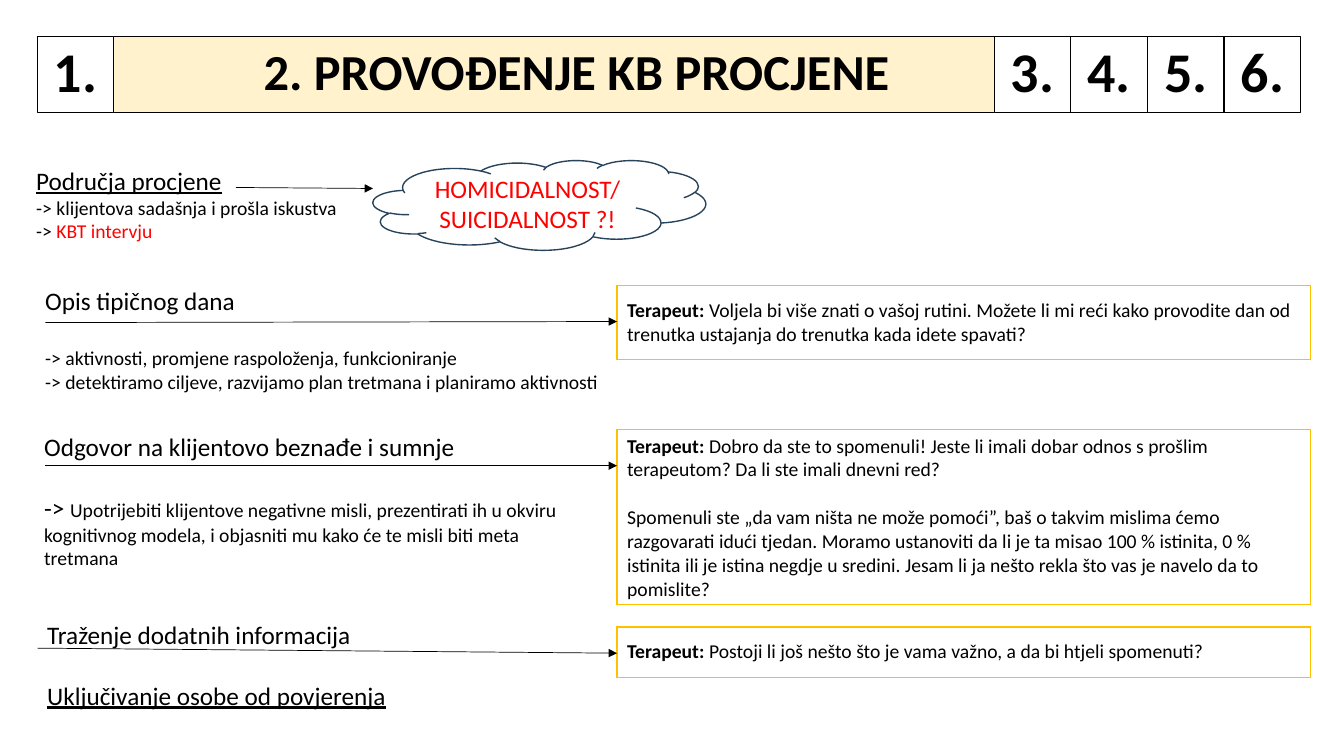
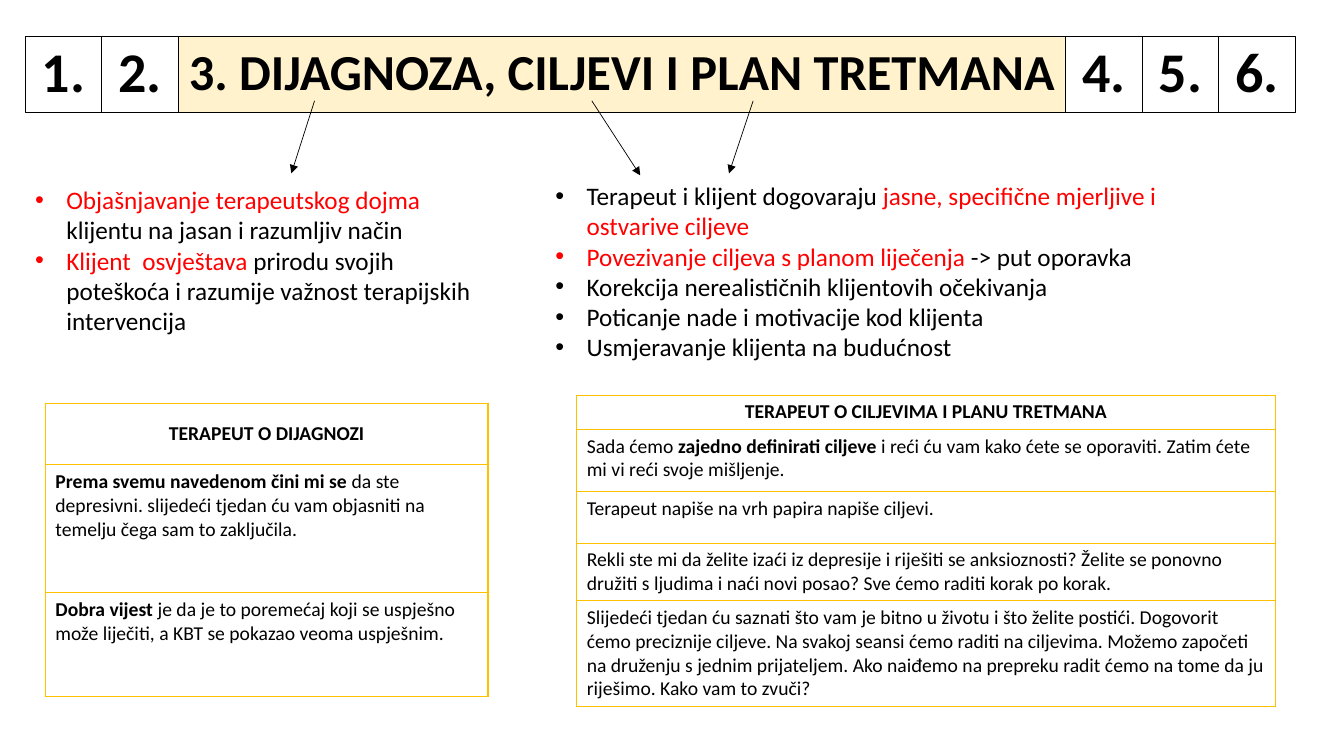
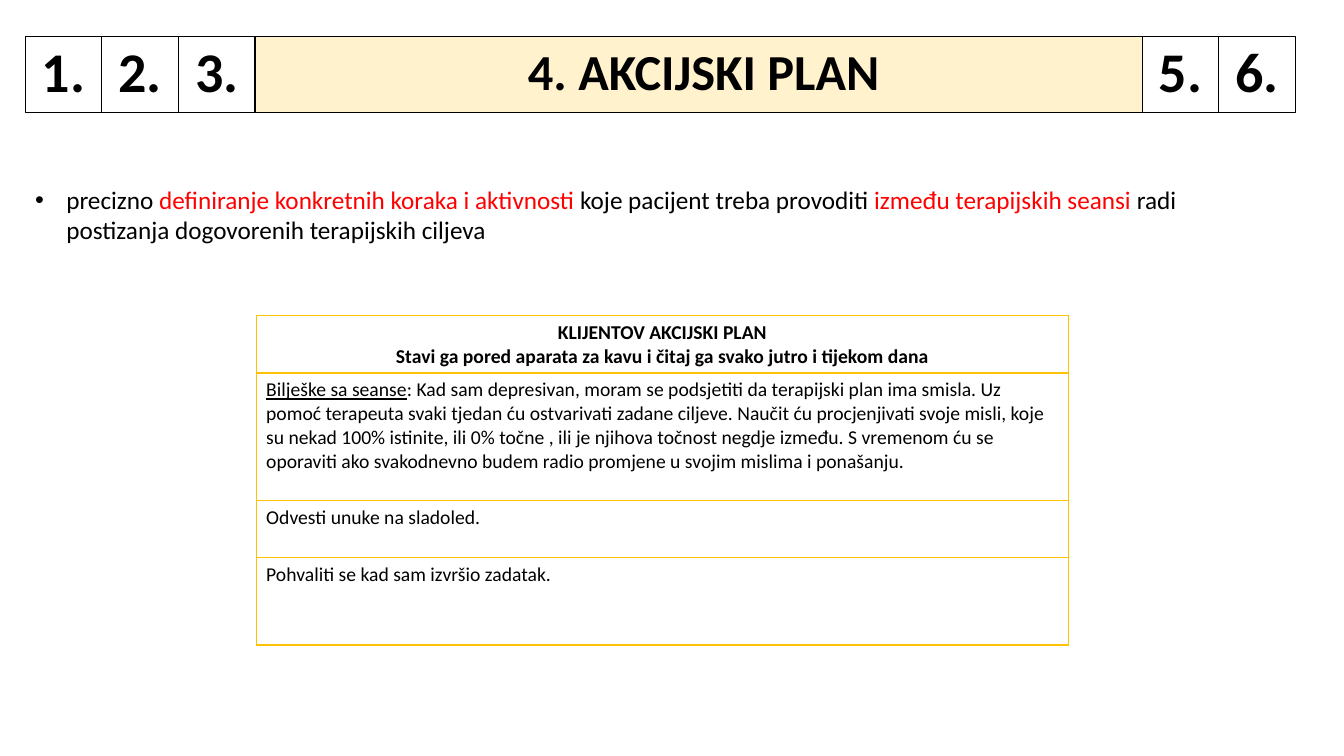
from lxml import etree
from pptx import Presentation
from pptx import util as u
from pptx.dml.color import RGBColor
from pptx.enum import shapes, text
from pptx.oxml.ns import qn

PX = 9144  # EMU in one px, 100 px to the inch
FONT, BLACK, RED, WHITE = "Calibri", "000000", "FF0000", "FFFFFF"
CREAM, GOLD, NAVY = "FFF2CC", "FFC000", "28445D"
TOP, SIDE, STEPS = 36, 76, 6
HANG = 31
MID = text.MSO_ANCHOR.MIDDLE
CENTER = text.PP_ALIGN.CENTER
rgb = RGBColor.from_string


def write(frame, paras, size, align=None, bullet=False):
    """Each paragraph is the gap above it in points, then (text, marks) runs.

    Marks: b bold, u underlined, r red, s small.
    """
    frame.word_wrap = True
    for i, (gap, *runs) in enumerate(paras):
        para = frame.paragraphs[0] if i == 0 else frame.add_paragraph()
        para.alignment = align
        para.space_before = u.Pt(gap)
        for words, marks in runs:
            run = para.add_run()
            run.text = words
            font = run.font
            font.name = FONT
            font.size = u.Pt(14 if "s" in marks else size)
            font.bold = "b" in marks
            font.underline = "u" in marks
            font.color.rgb = rgb(RED if "r" in marks else BLACK)
        if bullet:
            props = para._p.get_or_add_pPr()
            props.set("marL", str(HANG * PX))
            props.set("indent", str(-HANG * PX))
            etree.SubElement(props, qn("a:buFont")).set("typeface", "Arial")
            etree.SubElement(props, qn("a:buChar")).set("char", "•")


def paint(shape, fill, line, width):
    shape.fill.solid()
    shape.fill.fore_color.rgb = rgb(fill)
    shape.line.color.rgb = rgb(line)
    shape.line.width = u.Pt(width)


# step: place of the title among the six steps; pad: left inset of the title
# texts: x, y, w, h, bulleted, paragraphs
# tables: x, y, w, rows of (height, paragraphs); arrows: x1, y1, x2, y2
pages = [
    dict(
        title="2. PROVOĐENJE KB PROCJENE", step=1, left=37, wide=873, pad=50,
        clouds=[(370, 159, 330, 89, "HOMICIDALNOST/SUICIDALNOST ?!")],
        texts=[
            (26, 159, 961, 148, False, [
                (0, ("Područja procjene", "u")),
                (0, ("-> klijentova sadašnja i prošla iskustva", "s")),
                (0, ("-> ", "s"), ("KBT intervju", "rs"))]),
            (35, 278, 961, 148, False, [
                (0, ("Opis tipičnog dana", "")),
                (22, ("-> aktivnosti, promjene raspoloženja, funkcioniranje", "s")),
                (0, ("-> detektiramo ciljeve, razvijamo plan tretmana i planiramo "
                     "aktivnosti", "s"))]),
            (34, 423, 554, 148, False, [
                (0, ("Odgovor na klijentovo beznađe i sumnje", "")),
                (22, ("-> ", ""),
                 ("Upotrijebiti klijentove negativne misli, prezentirati ih u okviru "
                  "kognitivnog modela, i objasniti mu kako će te misli biti meta "
                  "tretmana", "s"))]),
            (37, 609, 667, 101, False, [
                (0, ("Traženje dodatnih informacija", "")),
                (22, ("Uključivanje osobe od povjerenja", "u"))]),
        ],
        tables=[
            (612, 283, 688, [(74, [
                (0, ("Terapeut: ", "b"),
                 ("Voljela bi više znati o vašoj rutini. Možete li mi reći kako "
                  "provodite dan od trenutka ustajanja do trenutka kada idete "
                  "spavati?", ""))])]),
            (612, 426, 688, [(173, [
                (0, ("Terapeut: ", "b"),
                 ("Dobro da ste to spomenuli! Jeste li imali dobar odnos s prošlim "
                  "terapeutom? Da li ste imali dnevni red?", "")),
                (17, ("Spomenuli ste „da vam ništa ne može pomoći”, baš o takvim "
                      "mislima ćemo razgovarati idući tjedan. Moramo ustanoviti da li "
                      "je ta misao 100 % istinita, 0 % istinita ili je istina negdje u "
                      "sredini. Jesam li ja nešto rekla što vas je navelo da to "
                      "pomislite?", ""))])]),
            (612, 622, 688, [(50, [
                (0, ("Terapeut: ", "b"),
                 ("Postoji li još nešto što je vama važno, a da bi htjeli "
                  "spomenuti?", ""))])]),
        ],
        arrows=[(45, 320, 612, 319), (45, 462, 612, 462),
                (37, 643, 612, 648), (234, 186, 370, 187)],
    ),
    dict(
        title="3. DIJAGNOZA, CILJEVI I PLAN TRETMANA", step=2, left=25, wide=880,
        pad=5, clouds=[],
        texts=[
            (25, 178, 477, 162, True, [
                (0, ("Objašnjavanje terapeutskog dojma ", "r"),
                 ("klijentu na jasan i razumljiv način", "")),
                (0, ("Klijent  osvještava ", "r"),
                 ("prirodu svojih poteškoća i razumije važnost terapijskih "
                  "intervencija", ""))]),
            (541, 174, 709, 192, True, [
                (0, ("Terapeut i klijent dogovaraju ", ""),
                 ("jasne, specifične mjerljive i ostvarive ciljeve", "r")),
                (0, ("Povezivanje ciljeva s planom liječenja ", "r"),
                 ("-> put oporavka", "")),
                (0, ("Korekcija nerealističnih klijentovih očekivanja", "")),
                (0, ("Poticanje nade i motivacije kod klijenta", "")),
                (0, ("Usmjeravanje klijenta na budućnost", ""))]),
        ],
        tables=[
            (45, 400, 439, [
                (61, [(0, ("TERAPEUT O DIJAGNOZI", "b"))]),
                (127, [(0, ("Prema svemu navedenom čini mi se ", "b"),
                        ("da ste depresivni. slijedeći tjedan ću vam objasniti na "
                         "temelju čega sam to zaključila.", ""))]),
                (103, [(0, ("Dobra vijest ", "b"),
                        ("je da je to poremećaj koji se uspješno može liječiti, a KBT "
                         "se pokazao veoma uspješnim.", ""))])]),
            (572, 392, 693, [
                (34, [(0, ("TERAPEUT O CILJEVIMA I PLANU TRETMANA", "b"))]),
                (62, [(0, ("Sada ćemo ", ""), ("zajedno definirati ciljeve ", "b"),
                       ("i reći ću vam kako ćete se oporaviti. Zatim ćete mi vi reći "
                        "svoje mišljenje.", ""))]),
                (51, [(0, ("Terapeut napiše na vrh papira napiše ciljevi.", ""))]),
                (57, [(0, ("Rekli ste mi da želite izaći iz depresije i riješiti se "
                           "anksioznosti? Želite se ponovno družiti s ljudima i naći "
                           "novi posao? Sve ćemo raditi korak po korak.", ""))]),
                (105, [(0, ("Slijedeći tjedan ću saznati što vam je bitno u životu i "
                            "što želite postići. Dogovorit ćemo preciznije ciljeve. Na "
                            "svakoj seansi ćemo raditi na ciljevima. Možemo započeti "
                            "na druženju s jednim prijateljem. Ako naiđemo na prepreku "
                            "radit ćemo na tome da ju riješimo. Kako vam to "
                            "zvuči?", ""))])]),
        ],
        arrows=[(312, 100, 289, 172), (747, 100, 723, 172), (587, 100, 635, 174)],
    ),
    dict(
        title="4. AKCIJSKI PLAN", step=3, left=25, wide=880, pad=15, clouds=[],
        texts=[
            (25, 178, 1193, 71, True, [
                (0, ("precizno ", ""),
                 ("definiranje konkretnih koraka i aktivnosti ", "r"),
                 ("koje pacijent treba provoditi ", ""),
                 ("između terapijskih seansi ", "r"),
                 ("radi postizanja dogovorenih terapijskih ciljeva", ""))]),
        ],
        tables=[
            (254, 313, 806, [
                (57, [(0, ("KLIJENTOV AKCIJSKI PLAN", "b")),
                      (0, ("Stavi ga pored aparata za kavu i čitaj ga svako jutro i "
                           "tijekom dana", "b"))]),
                (127, [(0, ("Bilješke sa seanse", "u"),
                        (": Kad sam depresivan, moram se podsjetiti da terapijski plan "
                         "ima smisla. Uz pomoć terapeuta svaki tjedan ću ostvarivati "
                         "zadane ciljeve. Naučit ću procjenjivati svoje misli, koje su "
                         "nekad 100% istinite, ili 0% točne , ili je njihova točnost "
                         "negdje između. S vremenom ću se oporaviti ako svakodnevno "
                         "budem radio promjene u svojim mislima i ponašanju.", ""))]),
                (56, [(0, ("Odvesti unuke na sladoled.", ""))]),
                (87, [(0, ("Pohvaliti se kad sam izvršio zadatak.", ""))])]),
        ],
        arrows=[],
    ),
]

deck = Presentation()
deck.slide_width = u.Inches(13.33)
deck.slide_height = u.Inches(7.5)

for page in pages:
    slide = deck.slides.add_slide(deck.slide_layouts[5])
    items = slide.shapes

    # Step band: the current step is the wide title
    x = page["left"]
    for step in range(STEPS):
        now = step == page["step"]
        wide = page["wide"] if now else SIDE
        spot = [n * PX for n in (x, TOP, wide, SIDE)]
        if now:
            box = items.title
            box.left, box.top, box.width, box.height = spot
        else:
            box = items.add_shape(shapes.MSO_SHAPE.RECTANGLE, *spot)
            box.shadow.inherit = False
        paint(box, CREAM if now else WHITE, BLACK, 0.75)
        frame = box.text_frame
        frame.auto_size = text.MSO_AUTO_SIZE.NONE
        frame.vertical_anchor = MID
        frame.margin_left = (page["pad"] if now else 5) * PX
        frame.margin_right = frame.margin_top = frame.margin_bottom = 5 * PX
        label = page["title"] if now else f"{step + 1}."
        write(frame, [(0, (label, "b"))], 36 if now else 40, CENTER)
        frame.paragraphs[0].line_spacing = 0.9
        x += wide

    for *spot, bullet, paras in page["texts"]:
        box = items.add_textbox(*[n * PX for n in spot])
        write(box.text_frame, paras, 18, bullet=bullet)

    for *spot, words in page["clouds"]:
        cloud = items.add_shape(shapes.MSO_SHAPE.CLOUD, *[n * PX for n in spot])
        cloud.shadow.inherit = False
        paint(cloud, WHITE, NAVY, 1)
        cloud.text_frame.vertical_anchor = MID
        write(cloud.text_frame, [(0, (words, "r"))], 18, CENTER)

    for x, y, wide, rows in page["tables"]:
        high = sum(row[0] for row in rows)
        grid = items.add_table(len(rows), 1, x * PX, y * PX, wide * PX, high * PX).table
        grid.first_row = grid.horz_banding = False
        for i, (high, paras) in enumerate(rows):
            grid.rows[i].height = high * PX
            cell = grid.cell(i, 0)
            props = cell._tc.get_or_add_tcPr()
            for side in "LRTB":
                edge = etree.SubElement(props, qn(f"a:ln{side}"), w=str(u.Pt(1)))
                fill = etree.SubElement(edge, qn("a:solidFill"))
                etree.SubElement(fill, qn("a:srgbClr"), val=GOLD)
            cell.fill.background()
            if i == 0:
                cell.vertical_anchor = MID
            head = i == 0 and len(rows) > 1
            write(cell.text_frame, paras, 14, CENTER if head else None)

    for ends in page["arrows"]:
        arrow = items.add_connector(shapes.MSO_CONNECTOR.STRAIGHT, *[n * PX for n in ends])
        arrow.line.color.rgb = rgb(BLACK)
        arrow.line.width = u.Pt(0.5)
        props = arrow._element.spPr
        etree.SubElement(props.find(qn("a:ln")), qn("a:tailEnd"), type="triangle")
        etree.SubElement(props, qn("a:effectLst"))

deck.save("out.pptx")
